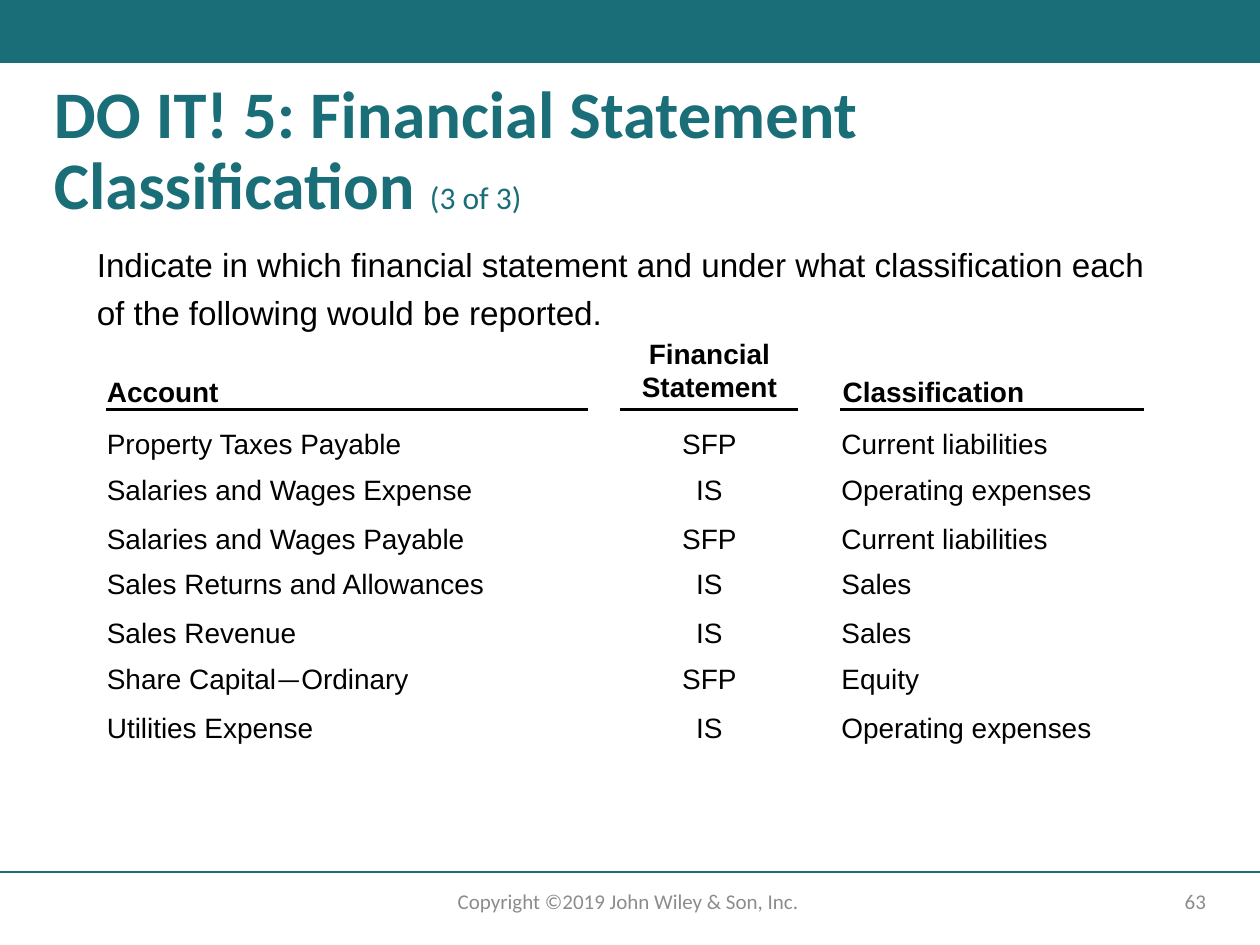
from typing import NamedTuple

from lxml import etree
from pptx import Presentation
from pptx.dml.color import RGBColor
from pptx.enum import shapes, text
from pptx.oxml.ns import qn
from pptx.util import Inches, Pt

COLORS = {"teal": "196E78", "black": "000000", "white": "FFFFFF", "grey": "8C8C8C"}
LEFT, CENTER, RIGHT = text.PP_ALIGN.LEFT, text.PP_ALIGN.CENTER, text.PP_ALIGN.RIGHT
TOP, MIDDLE = text.MSO_ANCHOR.TOP, text.MSO_ANCHOR.MIDDLE


class Run(NamedTuple):
    text: str
    font: str = "Arial"
    size: float = 16
    bold: bool = False


class Column(NamedTuple):
    header: str
    header_box: tuple
    rule: tuple
    left: float
    width: float
    align: text.PP_ALIGN


class Account(NamedTuple):
    name: str
    statement: str
    classification: str


COLUMNS = [
    Column("Account", (0.75, 2.92, 3.42, 0.37), (0.84, 4.67), 0.75, 4.08, LEFT),
    Column("Financial Statement", (4.84, 2.62, 1.58, 0.63), (4.92, 6.33), 4.92, 1.42, CENTER),
    Column("Classification", (6.59, 2.92, 2.83, 0.37), (6.67, 9.08), 6.58, 3.25, LEFT),
]
ACCOUNTS = [
    Account("Property Taxes Payable", "SFP", "Current liabilities"),
    Account("Salaries and Wages Expense", "IS", "Operating expenses"),
    Account("Salaries and Wages Payable", "SFP", "Current liabilities"),
    Account("Sales Returns and Allowances", "IS", "Sales"),
    Account("Sales Revenue", "IS", "Sales"),
    Account("Share Capital—Ordinary", "SFP", "Equity"),
    Account("Utilities Expense", "IS", "Operating expenses"),
]
FIRST_ROW, ROW_PAIR, ROW_STEP, ROW_HEIGHT = 3.34, 0.75, 0.36, 0.37


def add_text(s, box: tuple, *runs: Run, color: str = "black", align=LEFT,
             anchor=TOP, line_spacing: float = 1.0) -> None:
    tf = s.shapes.add_textbox(*map(Inches, box)).text_frame
    tf.word_wrap = True
    tf.vertical_anchor = anchor
    p = tf.paragraphs[0]
    p.alignment = align
    p.line_spacing = line_spacing
    for run in runs:
        r = p.add_run()
        r.text = run.text
        r.font.name, r.font.size, r.font.bold = run.font, Pt(run.size), run.bold
        r.font.color.rgb = RGBColor.from_string(COLORS[color])


def add_rule(s, left: float, right: float, y: float, color: str, width: float) -> None:
    line = s.shapes.add_connector(shapes.MSO_CONNECTOR.STRAIGHT, Inches(left), Inches(y),
                                  Inches(right), Inches(y))
    line.line.color.rgb = RGBColor.from_string(COLORS[color])
    line.line.width = Pt(width)
    etree.SubElement(line._element.spPr, qn("a:effectLst"))


def add_band(s, box: tuple, color: str) -> None:
    sp = s.shapes.add_shape(shapes.MSO_SHAPE.RECTANGLE, *map(Inches, box))
    sp.shadow.inherit = False
    sp.fill.solid()
    sp.fill.fore_color.rgb = RGBColor.from_string(COLORS[color])
    sp.line.fill.background()


def cell_runs(value: str) -> list[Run]:
    """Set any em dash in Calibri and the words around it in Arial."""
    before, dash, after = value.partition("—")
    return [Run(before), Run(dash, "Calibri"), Run(after)] if dash else [Run(value)]


def add_accounts(s) -> None:
    for col in COLUMNS:
        add_text(s, col.header_box, Run(col.header, bold=True), align=col.align)
        add_rule(s, *col.rule, 3.25, "black", 1.5)
    for i, account in enumerate(ACCOUNTS):
        pair, odd = divmod(i, 2)
        top = FIRST_ROW + pair * ROW_PAIR + odd * ROW_STEP
        for col, value in zip(COLUMNS, account):
            add_text(s, (col.left, top, col.width, ROW_HEIGHT), *cell_runs(value),
                     align=col.align)


def main() -> None:
    prs = Presentation()
    prs.slide_width, prs.slide_height = Inches(10), Inches(7.5)
    s = prs.slides.add_slide(prs.slide_layouts[6])

    add_band(s, (0, 0, 10, 0.5), "teal")
    add_rule(s, 0, 10, 6.92, "teal", 1)
    add_text(s, (0.33, 0.59, 9.33, 1.25),
             Run("DO IT! 5: Financial Statement Classification ", "Calibri", 38, True),
             Run("(3 of 3)", "Calibri", 18), color="teal", line_spacing=0.9)
    add_text(s, (0.67, 1.83, 8.75, 0.84),
             Run("Indicate in which financial statement and under what classification "
                 "each of the following would be reported.", size=19), line_spacing=1.2)
    add_accounts(s)
    add_text(s, (3.32, 6.95, 3.37, 0.4),
             Run("Copyright ©2019 John Wiley & Son, Inc. ", "Calibri", 12),
             color="grey", align=CENTER, anchor=MIDDLE)
    add_text(s, (7.07, 6.95, 2.6, 0.4), Run("63", "Calibri", 12),
             color="grey", align=RIGHT, anchor=MIDDLE)
    prs.save("out.pptx")


if __name__ == "__main__":
    main()
